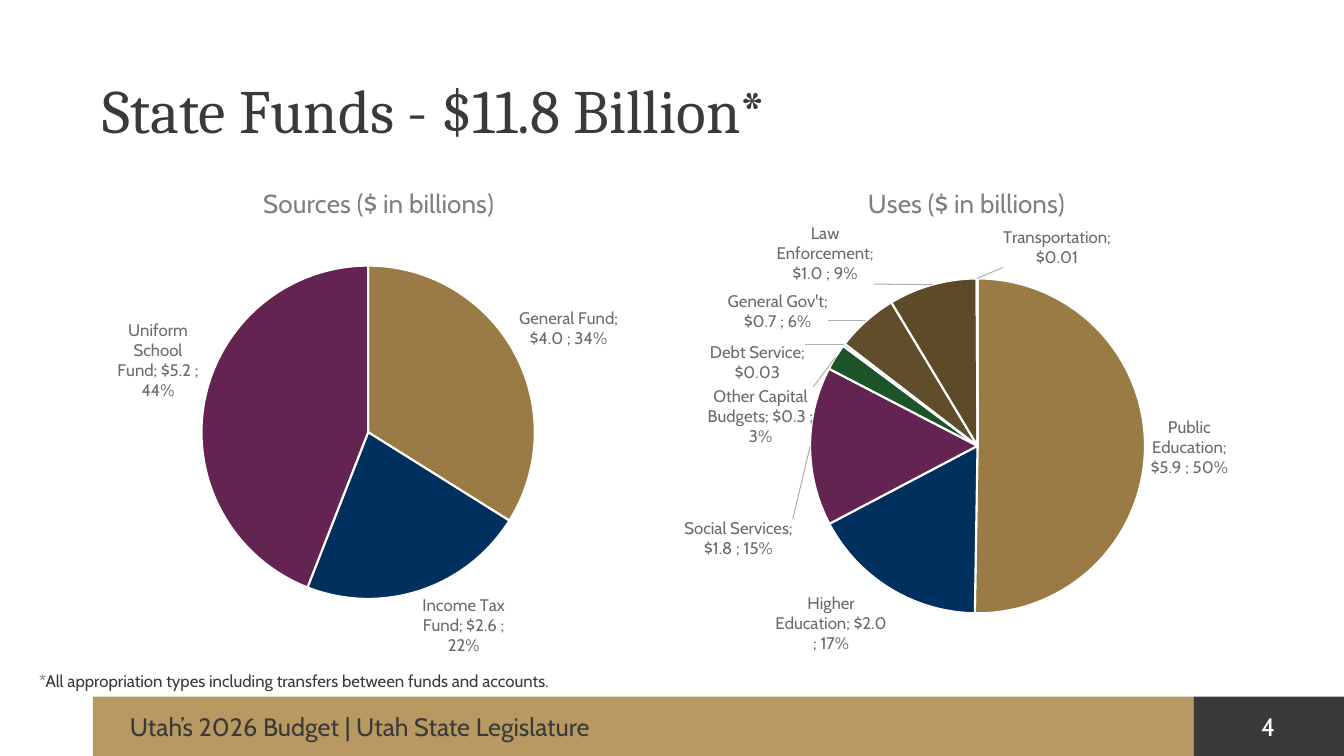
from dataclasses import dataclass, field
from typing import Optional

import lxml.etree
import pptx
import pptx.chart.data
import pptx.dml.color
import pptx.enum.chart
import pptx.enum.shapes
import pptx.enum.text
import pptx.oxml.ns
import pptx.util

Pt = pptx.util.Pt
qn = pptx.oxml.ns.qn
LabelPosition = pptx.enum.chart.XL_LABEL_POSITION
Align = pptx.enum.text.PP_ALIGN
Anchor = pptx.enum.text.MSO_ANCHOR


@dataclass(frozen=True)
class Theme:
    heading_font: str = "Cambria"
    body_font: str = "Cabin"
    dark: str = "3A3A3A"
    band: str = "B89961"
    white: str = "FFFFFF"
    label: str = "6B6B6B"
    chart_title: str = "7F7F7F"
    leader: str = "B0B0B0"
    title_size: float = 44
    chart_title_size: float = 18.6
    large_size: float = 18
    small_size: float = 12
    chart_size: float = 10
    money: str = '"$"#,##0.0_);\\("$"#,##0.0\\)'
    cents: str = '"$"#,##0.00'


THEME = Theme()


@dataclass(frozen=True)
class Area:
    left: float
    top: float
    width: float
    height: float

    def lengths(self) -> list:
        return [Pt(v) for v in (self.left, self.top, self.width, self.height)]


@dataclass(frozen=True)
class Band:
    area: Area
    color: str
    opacity: int = 100


@dataclass(frozen=True)
class Caption:
    text: str
    area: Area
    size: float
    color: str = THEME.dark
    font: str = THEME.body_font
    align: Align = Align.LEFT
    anchor: Anchor = Anchor.TOP
    line_spacing: float = 1.0


@dataclass(frozen=True)
class Slice:
    name: str
    value: float
    color: str
    label_shift: Optional[tuple] = None  # fraction of the chart's width and height
    tiny: bool = False  # shown in cents, without a percentage


@dataclass(frozen=True)
class Pie:
    title: str
    title_place: dict
    area: Area
    plot_place: dict
    slices: list = field(default_factory=list)


BANDS = [
    Band(Area(0, 0, 960, 498), THEME.white, opacity=75),
    Band(Area(852.5, 497.5, 107.5, 42.5), THEME.dark),
    Band(Area(66.24, 497.5, 786.26, 42.5), THEME.band),
    Band(Area(0, 497.5, 66.24, 42.5), THEME.white),
]

CAPTIONS = [
    Caption("State Funds - $11.8 Billion*", Area(66.24, 28.8, 828, 104.4), THEME.title_size,
            font=THEME.heading_font, anchor=Anchor.MIDDLE, line_spacing=0.9),
    Caption("4", Area(865.5, 504.7, 80.6, 22.3), THEME.large_size, THEME.white,
            align=Align.CENTER),
    Caption("Utah’s 2026 Budget | Utah State Legislature", Area(85.7, 504.7, 744.5, 22.3),
            THEME.large_size),
    Caption("*All appropriation types including transfers between funds and accounts.",
            Area(20.9, 475.4, 428.4, 21.6), THEME.small_size),
]

PIES = [
    Pie("Sources ($ in billions)", {"x": 0.29, "y": 0.03}, Area(66.24, 118, 408.2, 368),
        {"x": 0.19, "y": 0.195, "w": 0.584, "h": 0.647}, [
            Slice("General Fund", 4.0, "9A7B45"),
            Slice("Income Tax Fund", 2.6, "00315E"),
            Slice("Uniform School Fund", 5.2, "642451"),
        ]),
    Pie("Uses ($ in billions)", {"x": 0.32, "y": 0.03}, Area(486, 118, 408.2, 368),
        {"x": 0.227, "y": 0.196, "w": 0.586, "h": 0.698}, [
            Slice("Public Education", 5.9, "9A7B45"),
            Slice("Higher Education", 2.0, "00315E"),
            Slice("Social Services", 1.8, "642451", (-0.02, 0.18)),
            Slice("Other Capital Budgets", 0.3, "1D5329", (-0.03, 0.18)),
            Slice("Debt Service", 0.03, "85251A", (-0.06, 0.08), tiny=True),
            Slice("General Gov't", 0.7, "604D2B", (-0.06, 0.03)),
            Slice("Law Enforcement", 1.0, "5C4A29", (-0.1, 0.01)),
            Slice("Transportation", 0.01, "001D38", (0.14, -0.01), tiny=True),
        ]),
]


def rgb(color: str) -> pptx.dml.color.RGBColor:
    return pptx.dml.color.RGBColor.from_string(color)


def style_font(font, size: float, color: str, name: str = THEME.body_font) -> None:
    font.size, font.name, font.bold = Pt(size), name, False
    font.color.rgb = rgb(color)


def chart_element(tag: str, **attributes: str):
    element = lxml.etree.Element(qn("c:" + tag))
    for key, value in attributes.items():
        element.set(key, value)
    return element


def manual_layout(place: dict, modes: dict):
    layout = chart_element("layout")
    manual = chart_element("manualLayout")
    layout.append(manual)
    for tag, value in {**modes, **place}.items():
        manual.append(chart_element(tag, val=str(value)))
    return layout


def drop_layout(parent) -> None:
    for old in parent.findall(qn("c:layout")):
        parent.remove(old)


def separator():
    element = chart_element("separator")
    element.text = "; "
    return element


def leader_lines():
    lines = chart_element("leaderLines")
    parent = lxml.etree.SubElement(lines, qn("c:spPr"))
    for tag, key, value in (("ln", "w", str(Pt(0.75))), ("solidFill", None, None),
                            ("srgbClr", "val", THEME.leader)):
        parent = lxml.etree.SubElement(parent, qn("a:" + tag))
        if key:
            parent.set(key, value)
    return lines


def draw_band(page, band: Band) -> None:
    shape = page.shapes.add_shape(pptx.enum.shapes.MSO_SHAPE.RECTANGLE, *band.area.lengths())
    shape.shadow.inherit = False
    shape.fill.solid()
    shape.fill.fore_color.rgb = rgb(band.color)
    shape.line.fill.background()
    if band.opacity < 100:
        color = shape._element.spPr.find(".//" + qn("a:srgbClr"))
        lxml.etree.SubElement(color, qn("a:alpha")).set("val", str(band.opacity * 1000))


def draw_caption(page, caption: Caption) -> None:
    box = page.shapes.add_textbox(*caption.area.lengths())
    box.text_frame.word_wrap = True
    box.text_frame.vertical_anchor = caption.anchor
    para = box.text_frame.paragraphs[0]
    para.alignment, para.line_spacing = caption.align, caption.line_spacing
    span = para.add_run()
    span.text = caption.text
    style_font(span.font, caption.size, caption.color, caption.font)


def shift_label(label, part: Slice) -> None:
    label.position = LabelPosition.BEST_FIT
    style_font(label.font, THEME.small_size, THEME.label)
    element = label._get_or_add_dLbl()
    for tag, shown in (("showCatName", True), ("showPercent", not part.tiny)):
        element.find(qn("c:" + tag)).set("val", str(int(shown)))
    drop_layout(element)
    layout = manual_layout(dict(zip("xy", part.label_shift)), {})
    element.find(qn("c:idx")).addnext(layout)
    if part.tiny:
        layout.addnext(chart_element("numFmt", formatCode=THEME.cents, sourceLinked="0"))
    element.append(separator())


def draw_pie(page, pie: Pie) -> None:
    data = pptx.chart.data.CategoryChartData(number_format=THEME.money)
    data.categories = [part.name for part in pie.slices]
    data.add_series("Series 1", [part.value for part in pie.slices])
    chart = page.shapes.add_chart(pptx.enum.chart.XL_CHART_TYPE.PIE, *pie.area.lengths(), data).chart
    chart.has_legend = False
    style_font(chart.font, THEME.chart_size, THEME.dark)
    plot = chart.plots[0]
    plot.vary_by_categories = True

    # Title and plot placement
    chart.has_title = True
    span = chart.chart_title.text_frame.paragraphs[0].add_run()
    span.text = pie.title
    style_font(span.font, THEME.chart_title_size, THEME.chart_title)
    edges = {"xMode": "edge", "yMode": "edge"}
    title = chart.chart_title._element
    drop_layout(title)
    title.find(qn("c:tx")).addnext(manual_layout(pie.title_place, edges))
    plot_area = plot._element.getparent()
    drop_layout(plot_area)
    plot_area.insert(0, manual_layout(pie.plot_place, {"layoutTarget": "inner", **edges}))

    # Labels shared by all slices; the number format comes from the data
    series = plot.series[0]
    labels = series.data_labels
    style_font(labels.font, THEME.small_size, THEME.label)
    labels.number_format, labels.number_format_is_linked = THEME.money, True
    labels.position = LabelPosition.OUTSIDE_END
    labels.show_value = labels.show_percentage = labels.show_category_name = True
    labels._element.find(qn("c:showBubbleSize")).addnext(separator())
    labels._element.find(qn("c:showLeaderLines")).addnext(leader_lines())

    # Slice colours and moved labels
    for index, part in enumerate(pie.slices):
        point = series.points[index]
        point.format.fill.solid()
        point.format.fill.fore_color.rgb = rgb(part.color)
        point.format.line.color.rgb = rgb(THEME.white)
        point.format.line.width = Pt(1.5)
        if part.label_shift:
            shift_label(point.data_label, part)


def main() -> None:
    deck = pptx.Presentation()
    deck.slide_width, deck.slide_height = Pt(960), Pt(540)
    page = deck.slides.add_slide(deck.slide_layouts[6])
    for band in BANDS:
        draw_band(page, band)
    for pie in PIES:
        draw_pie(page, pie)
    for caption in CAPTIONS:
        draw_caption(page, caption)
    deck.save("out.pptx")


if __name__ == "__main__":
    main()
